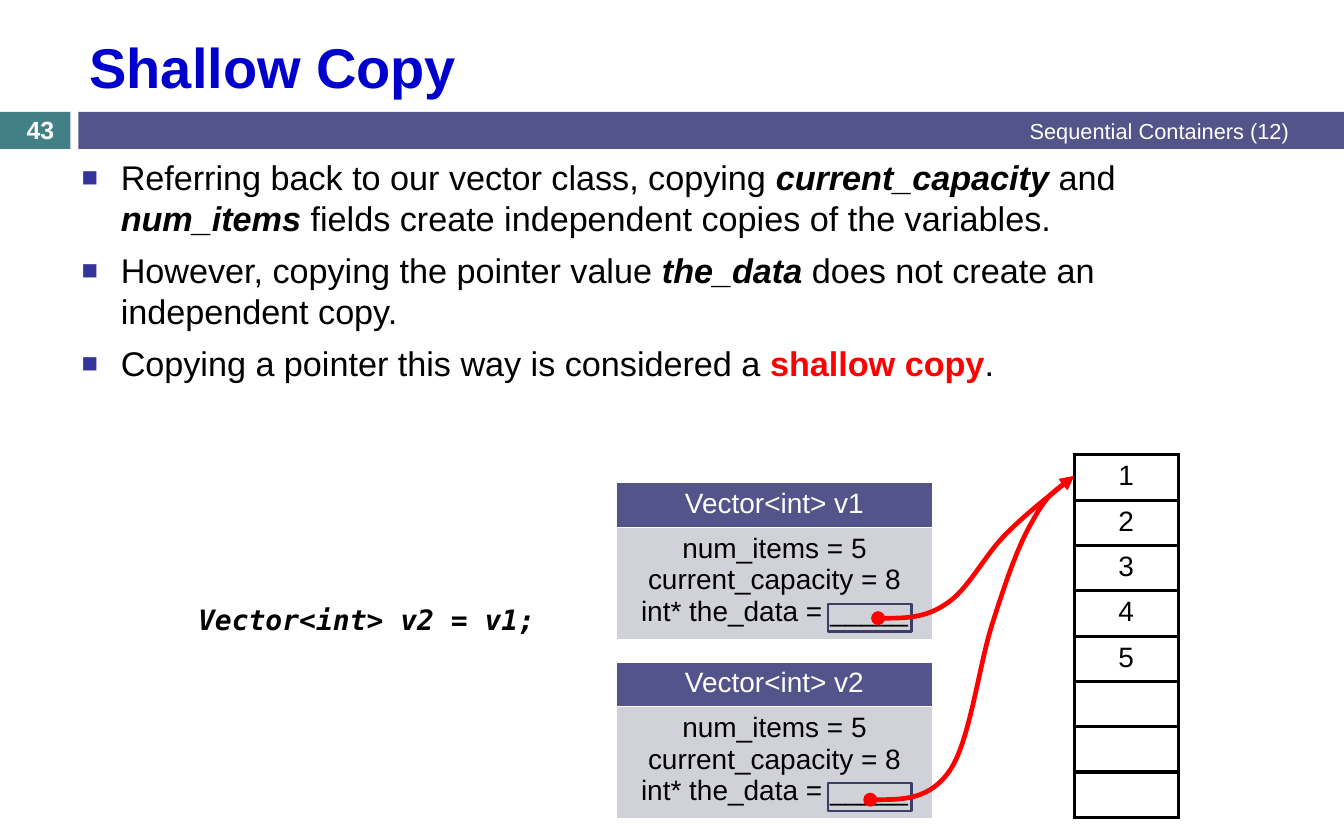
from lxml.etree import SubElement
from pptx import Presentation
from pptx.dml.color import RGBColor
from pptx.enum.shapes import MSO_SHAPE as SHAPE
from pptx.enum.text import MSO_ANCHOR as ANCHOR, PP_ALIGN as ALIGN
from pptx.oxml.ns import qn
from pptx.util import Inches, Pt

THEME = dict(
    sans="Arial", mono="DejaVu Sans Mono",
    title="0000CC", teal="438086", indigo="53548A", pale="D1D1DA", frame="3D3E66",
    bullet="333399", red="FF0000", black="000000", white="FFFFFF",
    title_size=36, body_size=22, text_size=18, number_size=16, footer_size=14,
)
TITLE = "Shallow Copy"
FOOTER = "Sequential Containers (12)"
NUMBER = "43"
CODE = "Vector<int> v2 = v1;"
EMPHASIS = dict(bold=True, italic=True)
ALERT = dict(bold=True, color="red")
BULLETS = [
    ["Referring back to our vector class, copying ", ("current_capacity", EMPHASIS), " and ",
     ("num_items", EMPHASIS), " fields create independent copies of the variables."],
    ["However, copying the pointer value ", ("the_data", EMPHASIS),
     " does not create an independent copy."],
    ["Copying a pointer this way is considered a ", ("shallow copy", ALERT), "."],
]
FIELDS = ["num_items = 5", "current_capacity = 8", "int* the_data = _____"]
VECTORS = [("Vector<int> v1", 4.31), ("Vector<int> v2", 5.91)]
VECTOR_LEFT, VECTOR_WIDTH, VECTOR_ROWS = 5.5, 2.83, [0.4, 1.0]
ARRAY = ["1", "2", "3", "4", "5", "", "", ""]
ARRAY_LEFT, ARRAY_TOP, ARRAY_WIDTH, ARRAY_ROW = 9.59, 4.06, 0.93, 0.405
TARGET = (ARRAY_LEFT, 4.25)
CURVES = [
    [(7.77, 7.14), (8.03, 7.14), (8.3, 7.14), (8.48, 6.88), (8.66, 6.62), (8.74, 5.94),
     (8.86, 5.57), (8.98, 5.19), (9.09, 4.87), (9.22, 4.65), (9.34, 4.43), (9.47, 4.34), TARGET],
    [(7.84, 5.52), (8.05, 5.52), (8.26, 5.52), (8.45, 5.39), (8.64, 5.27), (8.79, 4.96),
     (8.98, 4.77), (9.17, 4.58), (9.38, 4.42), TARGET],
]


def rgb(name):
    """Return a theme colour."""
    return RGBColor.from_string(THEME[name])


def write(tf, text, size="text_size", color="black", font="sans", bold=False, italic=False,
          align=ALIGN.LEFT, before=0):
    """Write paragraphs of plain or specially formatted runs and return them."""
    lines = [text] if isinstance(text, str) else text
    for i, line in enumerate(lines):
        p = tf.paragraphs[0] if i == 0 else tf.add_paragraph()
        p.alignment, p.space_before = align, Pt(before)
        for part in [line] if isinstance(line, str) else line:
            words, extra = (part, {}) if isinstance(part, str) else part
            look = dict(color=color, bold=bold, italic=italic) | extra
            r = p.add_run()
            r.text = words
            r.font.name, r.font.size = THEME[font], Pt(THEME[size])
            r.font.bold, r.font.italic = look["bold"], look["italic"]
            r.font.color.rgb = rgb(look["color"])
    return tf.paragraphs


def add_text(s, box, text, anchor=ANCHOR.MIDDLE, **look):
    """Add a wrapping text box and return its paragraphs."""
    tf = s.shapes.add_textbox(*map(Inches, box)).text_frame
    tf.word_wrap, tf.vertical_anchor = True, anchor
    return write(tf, text, **look)


def add_bullet(p):
    """Give a paragraph a square bullet with a hanging indent."""
    pPr = p._p.get_or_add_pPr()
    pPr.set("marL", str(Inches(0.35)))
    pPr.set("indent", str(-Inches(0.35)))
    SubElement(SubElement(pPr, qn("a:buClr")), qn("a:srgbClr"), val=THEME["bullet"])
    SubElement(pPr, qn("a:buSzPct"), val="80000")
    SubElement(pPr, qn("a:buFont"), typeface=THEME["sans"])
    SubElement(pPr, qn("a:buChar"), char="■")


def add_rect(s, box, fill=None, line=None):
    """Add a rectangle that is filled or outlined."""
    sp = s.shapes.add_shape(SHAPE.RECTANGLE, *map(Inches, box))
    sp.shadow.inherit = False
    if fill:
        sp.fill.solid()
        sp.fill.fore_color.rgb = rgb(fill)
    else:
        sp.fill.background()
    if line:
        sp.line.color.rgb, sp.line.width = rgb(line), Pt(1.5)
    else:
        sp.line.fill.background()


def add_column(s, left, top, width, heights, cells, border, weight):
    """Add a one-column table from (text, fill, colour) cells."""
    shape = s.shapes.add_table(len(cells), 1, *map(Inches, (left, top, width, sum(heights))))
    table = shape.table
    table.first_row = table.horz_banding = False
    for i, (text, fill, color) in enumerate(cells):
        table.rows[i].height = Inches(heights[i])
        cell = table.cell(i, 0)
        if text:
            write(cell.text_frame, text, color=color, align=ALIGN.CENTER)
        tcPr = cell._tc.get_or_add_tcPr()
        for side in ("a:lnL", "a:lnR", "a:lnT", "a:lnB"):
            ln = SubElement(tcPr, qn(side), w=str(Pt(weight)))
            SubElement(SubElement(ln, qn("a:solidFill")), qn("a:srgbClr"), val=THEME[border])
        if fill:
            cell.fill.solid()
            cell.fill.fore_color.rgb = rgb(fill)
        else:
            cell.fill.background()


def add_curve(s, points):
    """Add a red Bezier pointer with a round tail and an arrowhead."""
    start, *rest = [(Inches(x), Inches(y)) for x, y in points]
    builder = s.shapes.build_freeform(*start)
    builder.add_line_segments(rest, close=False)
    sp = builder.convert_to_shape()
    sp.shadow.inherit = False
    sp.fill.background()
    sp.line.color.rgb, sp.line.width = rgb("red"), Pt(3)
    segments = list(sp._element.iter(qn("a:lnTo")))
    outline = segments[0].getparent()
    for i in range(0, len(segments), 3):
        bezier = SubElement(outline, qn("a:cubicBezTo"))
        for segment in segments[i:i + 3]:
            bezier.append(segment[0])
            outline.remove(segment)
    ln = sp.line._get_or_add_ln()
    SubElement(ln, qn("a:headEnd"), type="oval")
    SubElement(ln, qn("a:tailEnd"), type="triangle")


def main():
    """Build the slide."""
    prs = Presentation()
    prs.slide_width, prs.slide_height = Inches(12), Inches(7.5)
    s = prs.slides.add_slide(prs.slide_layouts[6])

    add_rect(s, (0, 1, 0.63, 0.33), fill="teal")
    add_rect(s, (0.7, 1, 11.3, 0.33), fill="indigo")
    add_text(s, (0.7, 0.19, 10.91, 0.8), TITLE, size="title_size", color="title", bold=True)
    for p in add_text(s, (0.63, 1.35, 10.99, 5.86), BULLETS, anchor=ANCHOR.TOP,
                      size="body_size", before=7):
        add_bullet(p)
    add_text(s, (4.5, 0.99, 7.11, 0.35), FOOTER, size="footer_size", color="white",
             align=ALIGN.RIGHT)
    add_text(s, (0, 1.01, 0.72, 0.3), NUMBER, size="number_size", color="white", bold=True,
             align=ALIGN.CENTER)
    add_text(s, (1.67, 5.33, 3.42, 0.4), CODE, anchor=ANCHOR.TOP, font="mono", **EMPHASIS)

    for name, top in VECTORS:
        cells = [(name, "indigo", "white"), (FIELDS, "pale", "black")]
        add_column(s, VECTOR_LEFT, top, VECTOR_WIDTH, VECTOR_ROWS, cells, "white", 1)
        add_rect(s, (7.39, top + 1.08, 0.75, 0.25), line="frame")
    add_column(s, ARRAY_LEFT, ARRAY_TOP, ARRAY_WIDTH, [ARRAY_ROW] * len(ARRAY),
               [(value, None, "black") for value in ARRAY], "black", 2.25)
    for points in CURVES:
        add_curve(s, points)

    prs.save("out.pptx")


if __name__ == "__main__":
    main()
